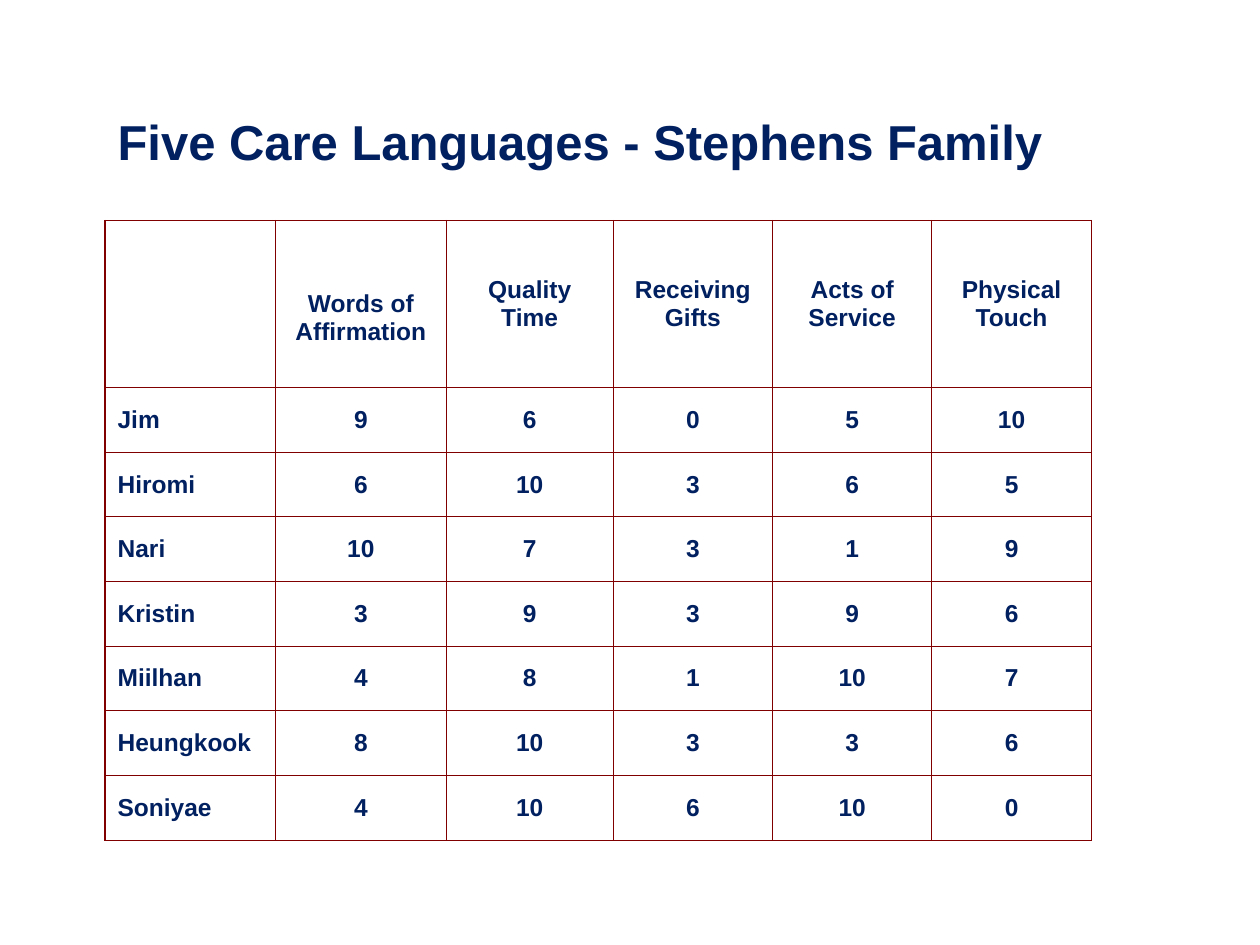
from lxml import etree
from pptx import Presentation
from pptx import util as u
from pptx.dml import color
from pptx.enum import text
from pptx.oxml import ns

COLORS = {"text": "002060", "border": "800000"}
FONT = "Arial"
LEFT, WIDTH = 60, 563.7

COLUMN_WIDTHS = [97.5, 97.5, 95.4, 91.1, 91.1, 91.1]
HEADER_HEIGHT, ROW_HEIGHT = 95.5, 36.95

LANGUAGES = ["", "Words of Affirmation", "Quality Time", "Receiving Gifts",
             "Acts of Service", "Physical Touch"]
SCORES = {
    "Jim": [9, 6, 0, 5, 10],
    "Hiromi": [6, 10, 3, 6, 5],
    "Nari": [10, 7, 3, 1, 9],
    "Kristin": [3, 9, 3, 9, 6],
    "Miilhan": [4, 8, 1, 10, 7],
    "Heungkook": [8, 10, 3, 3, 6],
    "Soniyae": [4, 10, 6, 10, 0],
}


def write(paragraph, content, size, alignment):
    paragraph.alignment = alignment
    run = paragraph.add_run()
    run.text = content
    run.font.name = FONT
    run.font.size = u.Pt(size)
    run.font.bold = True
    run.font.color.rgb = color.RGBColor.from_string(COLORS["text"])


def add_title(slide, content):
    title = slide.shapes.title
    title.left, title.top = u.Pt(LEFT), u.Pt(60)
    title.width, title.height = u.Pt(WIDTH), u.Pt(41)
    frame = title.text_frame
    frame.word_wrap = True
    frame.auto_size = text.MSO_AUTO_SIZE.NONE
    frame.vertical_anchor = text.MSO_ANCHOR.MIDDLE
    write(frame.paragraphs[0], content, 28, text.PP_ALIGN.LEFT)


def set_borders(cell):
    properties = cell._tc.get_or_add_tcPr()
    for side in ("lnL", "lnR", "lnT", "lnB"):
        line = etree.SubElement(properties, ns.qn(f"a:{side}"), w=str(u.Pt(0.75)))
        fill = etree.SubElement(line, ns.qn("a:solidFill"))
        etree.SubElement(fill, ns.qn("a:srgbClr"), val=COLORS["border"])


def fill_cell(cell, content, alignment):
    set_borders(cell)
    cell.fill.background()
    cell.vertical_anchor = text.MSO_ANCHOR.MIDDLE
    if content:
        write(cell.text_frame.paragraphs[0], content, 14, alignment)


def add_score_table(slide):
    rows = [LANGUAGES] + [[name, *scores] for name, scores in SCORES.items()]
    height = HEADER_HEIGHT + ROW_HEIGHT * len(SCORES)
    table = slide.shapes.add_table(
        len(rows), len(LANGUAGES), u.Pt(LEFT), u.Pt(126), u.Pt(WIDTH), u.Pt(height)
    ).table
    table.first_row = table.horz_banding = False

    # Column widths and row heights
    for column, width in zip(table.columns, COLUMN_WIDTHS):
        column.width = u.Pt(width)
    for index, row in enumerate(table.rows):
        row.height = u.Pt(ROW_HEIGHT if index else HEADER_HEIGHT)

    # Names are left-aligned, everything else is centred
    for row_index, values in enumerate(rows):
        for column_index, value in enumerate(values):
            alignment = text.PP_ALIGN.CENTER if column_index else text.PP_ALIGN.LEFT
            fill_cell(table.cell(row_index, column_index), str(value), alignment)

    # The first language sits lower than the other headings
    table.cell(0, 1).margin_top = u.Pt(19.7)


def main():
    presentation = Presentation()
    presentation.slide_width, presentation.slide_height = u.Pt(720), u.Pt(540)
    slide = presentation.slides.add_slide(presentation.slide_layouts[5])
    add_score_table(slide)
    add_title(slide, "Five Care Languages - Stephens Family")
    presentation.save("out.pptx")


if __name__ == "__main__":
    main()
